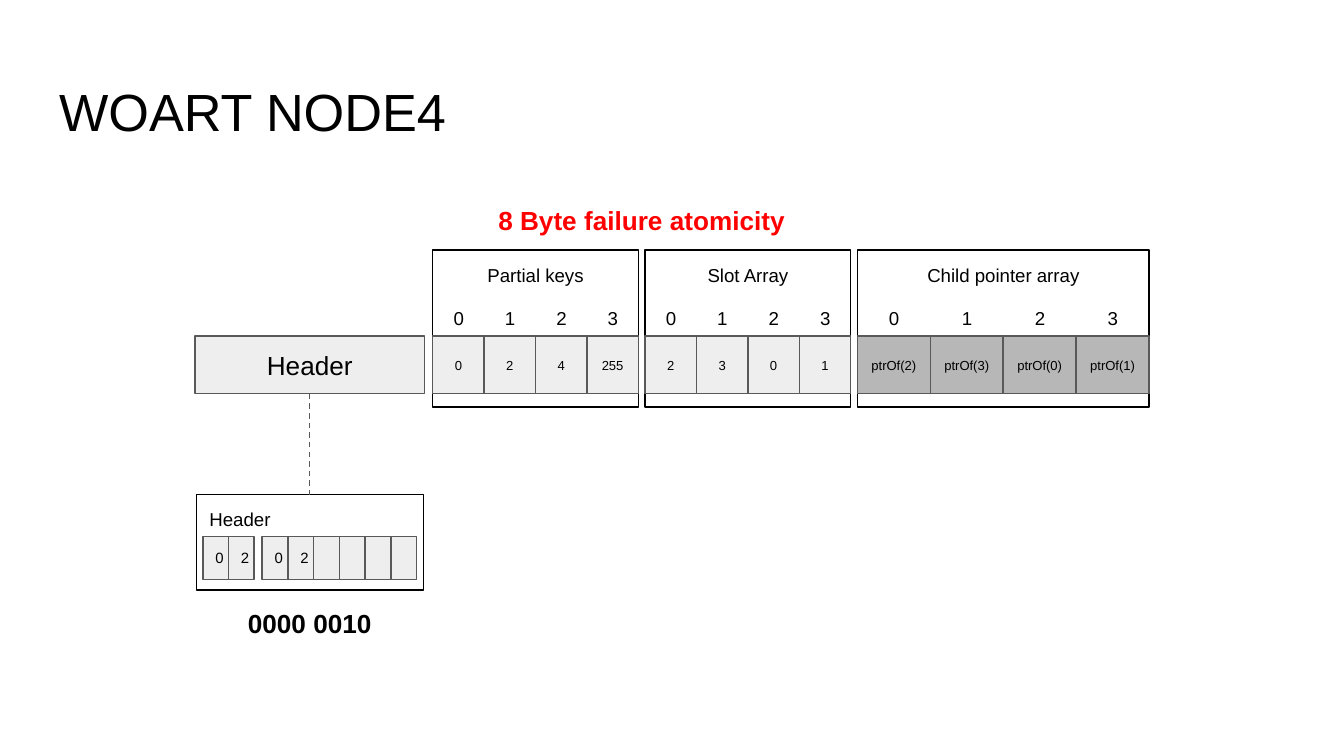
from lxml.etree import SubElement
from pptx import Presentation
from pptx.dml.color import RGBColor
from pptx.enum.dml import MSO_LINE
from pptx.enum.shapes import MSO_CONNECTOR, MSO_SHAPE
from pptx.enum.text import MSO_ANCHOR, MSO_AUTO_SIZE, PP_ALIGN
from pptx.oxml.ns import qn
from pptx.util import Inches, Pt

BLACK = "000000"
RED = "FF0000"
LIGHT_GRAY = "EEEEEE"
MID_GRAY = "B7B7B7"
DARK_GRAY = "595959"

FRAME_TOP, FRAME_HEIGHT = 1.86, 1.17
CELL_TOP, CELL_HEIGHT = 2.5, 0.43
INDEX_TOP, INDEX_WIDTH, INDEX_HEIGHT = 2.18, 0.27, 0.32

ARRAYS = [
    ("Partial keys", 3.22, 1.53, LIGHT_GRAY, ["0", "2", "4", "255"]),
    ("Slot Array", 4.8, 1.53, LIGHT_GRAY, ["2", "3", "0", "1"]),
    ("Child pointer array", 6.38, 2.17, MID_GRAY,
     ["ptrOf(2)", "ptrOf(3)", "ptrOf(0)", "ptrOf(1)"]),
]


def rgb(color):
    """Turn a hex string into a colour."""
    return RGBColor.from_string(color)


def write(shape, text, size, color=BLACK, bold=False, align=PP_ALIGN.CENTER,
          anchor=MSO_ANCHOR.TOP):
    """Put one formatted paragraph into a shape."""
    frame = shape.text_frame
    frame.text = text
    frame.word_wrap = True
    frame.auto_size = MSO_AUTO_SIZE.NONE
    frame.vertical_anchor = anchor
    frame.margin_left = frame.margin_right = Inches(0.1)
    frame.margin_top = frame.margin_bottom = Inches(0.1)
    paragraph = frame.paragraphs[0]
    paragraph.alignment = align
    for run in paragraph.runs:
        run.font.name = "Arial"
        run.font.size = Pt(size)
        run.font.bold = bold
        run.font.color.rgb = rgb(color)


def add_box(shapes, left, top, width, height, line, fill=None):
    """Add an outlined rectangle, filled if a colour is given."""
    box = shapes.add_shape(MSO_SHAPE.RECTANGLE, Inches(left), Inches(top),
                           Inches(width), Inches(height))
    box.shadow.inherit = False
    box.line.color.rgb = rgb(line)
    box.line.width = Pt(0.75)
    if fill:
        box.fill.solid()
        box.fill.fore_color.rgb = rgb(fill)
    else:
        box.fill.background()
    return box


def add_label(shapes, text, left, top, width, height, size, **style):
    """Add a text box."""
    label = shapes.add_textbox(Inches(left), Inches(top), Inches(width), Inches(height))
    write(label, text, size, **style)


def add_cells(shapes, values, left, top, width, height, size, fill):
    """Divide a row into equal cells and write their values."""
    cell_width = width / len(values)
    for position, value in enumerate(values):
        cell = add_box(shapes, left + position * cell_width, top, cell_width, height,
                       DARK_GRAY, fill)
        if value:
            write(cell, value, size, anchor=MSO_ANCHOR.MIDDLE)


def add_array(shapes, name, left, width, fill, values):
    """Add a named frame with its cells and the index above each cell."""
    frame = add_box(shapes, left, FRAME_TOP, width, FRAME_HEIGHT, BLACK)
    write(frame, name, 10)
    add_cells(shapes, values, left, CELL_TOP, width, CELL_HEIGHT, 7, fill)
    cell_width = width / len(values)
    for index in range(len(values)):
        index_left = left + (index + 0.5) * cell_width - INDEX_WIDTH / 2
        add_label(shapes, str(index), index_left, INDEX_TOP, INDEX_WIDTH, INDEX_HEIGHT,
                  10, align=PP_ALIGN.LEFT)


def add_header_detail(shapes):
    """Add the grouped close-up of the header and return its frame."""
    group = shapes.add_group_shape()
    frame = add_box(group.shapes, 1.46, 3.68, 1.69, 0.71, BLACK)
    write(frame, "Header", 10, align=PP_ALIGN.LEFT)
    add_cells(group.shapes, ["0", "2"], 1.51, 3.99, 0.38, 0.32, 8, LIGHT_GRAY)
    add_cells(group.shapes, ["0", "2", "", "", "", ""], 1.95, 3.99, 1.15, 0.32, 8,
              LIGHT_GRAY)
    return frame


def add_dashed_link(shapes, upper, lower):
    """Join the bottom of one box to the top of another."""
    link = shapes.add_connector(MSO_CONNECTOR.STRAIGHT, 0, 0, 0, 0)
    link.begin_connect(upper, 2)
    link.end_connect(lower, 0)
    link.line.color.rgb = rgb(DARK_GRAY)
    link.line.width = Pt(0.75)
    link.line.dash_style = MSO_LINE.DASH
    SubElement(link._element.spPr, qn("a:effectLst"))


def set_title(title, text):
    """Place and format the title placeholder."""
    title.left, title.top = Inches(0.34), Inches(0.49)
    title.width, title.height = Inches(9.32), Inches(0.63)
    write(title, text, 28, align=PP_ALIGN.LEFT)


def main():
    """Build the slide and save it."""
    presentation = Presentation()
    presentation.slide_width = Inches(10)
    presentation.slide_height = Inches(10) * 9 // 16
    slide = presentation.slides.add_slide(presentation.slide_layouts[5])
    shapes = slide.shapes

    set_title(shapes.title, "WOART NODE4")
    detail = add_header_detail(shapes)
    for array in ARRAYS:
        add_array(shapes, *array)
    header = add_box(shapes, 1.45, CELL_TOP, 1.71, CELL_HEIGHT, DARK_GRAY, LIGHT_GRAY)
    write(header, "Header", 14, anchor=MSO_ANCHOR.MIDDLE)
    add_dashed_link(shapes, header, detail)
    add_label(shapes, "0000 0010", 1.48, 4.42, 1.65, 0.36, 14, bold=True)
    add_label(shapes, "8 Byte failure atomicity", 3.22, 1.42, 3.11, 0.46, 14,
              color=RED, bold=True)

    presentation.save("out.pptx")


if __name__ == "__main__":
    main()
